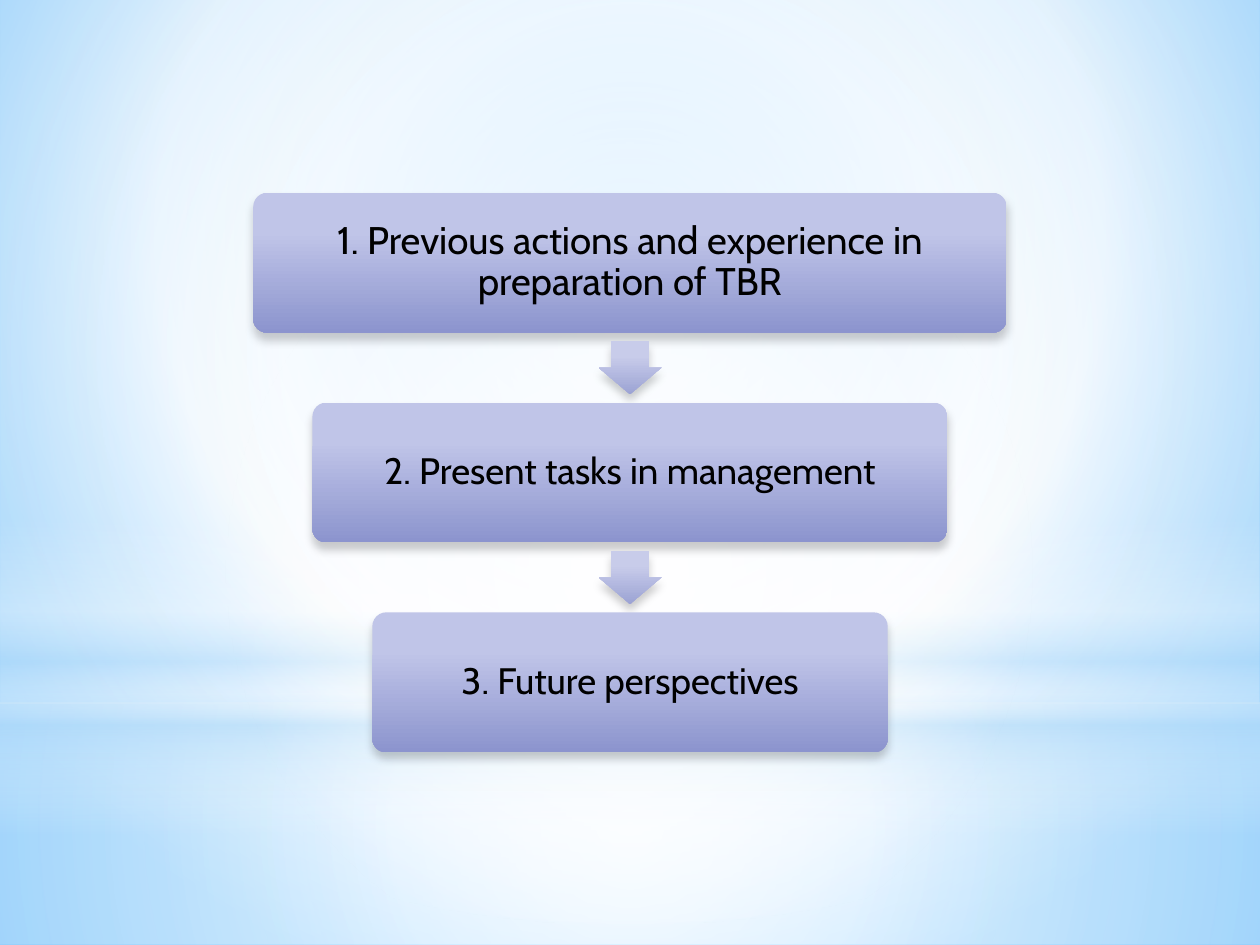
"""Build a slide with three tapering steps joined by arrows on a soft sky background."""
from lxml import etree
from pptx import Presentation
from pptx import util as u
from pptx.dml.color import RGBColor
from pptx.enum import shapes, text
from pptx.oxml.ns import qn

COLORS = {
    "white": "FFFFFF", "pale": "B4DCFA", "sky": "9ED5FF", "blue": "5BB9FF",
    "box_top": "C0C5E8", "box_base": "8C94CE",
    "arrow_top": "C8CCEA", "arrow_base": "9CA3D4", "black": "000000",
}
WIDTH, HEIGHT = u.Inches(10), u.Inches(7.5)
CENTER = (50, 50, 50, 50)


def paint(fill, element, stops, focus=None):
    """Fill with (position, colour, opacity) stops, downward or around a focus."""
    fill.gradient()
    gradient = element.find(".//" + qn("a:gradFill"))
    for child in list(gradient):
        gradient.remove(child)
    gradient.set("rotWithShape", "0")
    stop_list = etree.SubElement(gradient, qn("a:gsLst"))
    for position, color, opacity in stops:
        stop = etree.SubElement(stop_list, qn("a:gs"), pos=str(position * 1000))
        tint = etree.SubElement(stop, qn("a:srgbClr"), val=COLORS[color])
        if opacity < 100:
            etree.SubElement(tint, qn("a:alpha"), val=str(opacity * 1000))
    if focus:
        radial = etree.SubElement(gradient, qn("a:path"))
        radial.set("path", "circle")
        sides = {side: str(share * 1000) for side, share in zip("ltrb", focus)}
        etree.SubElement(radial, qn("a:fillToRect"), **sides)
    else:
        etree.SubElement(gradient, qn("a:lin"), ang="5400000", scaled="0")


def add_panel(kind, left, top, width, height, stops, focus=None, shadow=False):
    """Add a borderless gradient shape, with a soft shadow below if asked."""
    panel = page.shapes.add_shape(kind, int(left), int(top), int(width), int(height))
    panel.line.fill.background()
    panel.shadow.inherit = False
    paint(panel.fill, panel.element, stops, focus)
    if shadow:
        effects = panel.element.spPr.find(qn("a:effectLst"))
        outer = etree.SubElement(
            effects, qn("a:outerShdw"), blurRad=str(u.Pt(5)), dist=str(u.Pt(4)),
            dir="5400000", rotWithShape="0")
        tint = etree.SubElement(outer, qn("a:srgbClr"), val=COLORS["black"])
        etree.SubElement(tint, qn("a:alpha"), val="20000")
    return panel


deck = Presentation()
deck.slide_width, deck.slide_height = WIDTH, HEIGHT
page = deck.slides.add_slide(deck.slide_layouts[6])
paint(page.background.fill, page.element,
      [(0, "sky", 78), (60, "white", 100), (100, "blue", 100)], (20, 10, 20, 60))

kinds = shapes.MSO_SHAPE
horizon = u.Inches(5.58)
add_panel(kinds.RECTANGLE, 0, horizon, WIDTH, HEIGHT - horizon,
          [(0, "white", 91), (37, "white", 76), (100, "pale", 79)], CENTER)
add_panel(kinds.RECTANGLE, 0, 0, WIDTH, horizon,
          [(0, "white", 89), (48, "white", 62), (100, "pale", 79)], CENTER)
add_panel(kinds.RECTANGLE, 0, HEIGHT * 0.55, WIDTH, HEIGHT / 3,
          [(0, "white", 0), (29, "white", 30), (45, "pale", 40),
           (55, "white", 26), (65, "pale", 60), (100, "white", 0)])
add_panel(kinds.OVAL, 0, u.Inches(1.75), WIDTH, horizon,
          [(0, "white", 100), (56, "white", 0)], CENTER)

steps = [
    ("1. Previous actions and experience in preparation of TBR", 5.98, 22),
    ("2. Present tasks in management", 5.04, 21),
    ("3. Future perspectives", 4.09, 21),
]
first_top, box_height, pitch = u.Inches(1.53), u.Inches(1.11), u.Inches(1.665)
arrow_width, arrow_height = u.Inches(0.42), u.Inches(0.5)

for row, (label, inches, size) in enumerate(steps):
    top = first_top + row * pitch
    if row:
        gap_middle = top - (pitch - box_height) / 2
        arrow = add_panel(
            kinds.RIGHT_ARROW, (WIDTH - arrow_width) / 2, gap_middle - arrow_height / 2,
            arrow_width, arrow_height,
            [(28, "arrow_top", 100), (100, "arrow_base", 100)], shadow=True)
        arrow.rotation = 90
        arrow.adjustments[0], arrow.adjustments[1] = 0.6, 0.5

    width = u.Inches(inches)
    box = add_panel(kinds.ROUNDED_RECTANGLE, (WIDTH - width) / 2, top, width, box_height,
                    [(28, "box_top", 100), (100, "box_base", 100)], shadow=True)
    box.adjustments[0] = 0.1
    frame = box.text_frame
    frame.word_wrap = True
    frame.vertical_anchor = text.MSO_ANCHOR.MIDDLE
    frame.margin_left = frame.margin_right = u.Inches(0.11)
    frame.margin_top = frame.margin_bottom = u.Inches(0.11)
    para = frame.paragraphs[0]
    para.alignment = text.PP_ALIGN.CENTER
    para.line_spacing = 0.9
    span = para.add_run()
    span.text = label
    span.font.name, span.font.size = "Cabin", u.Pt(size)
    span.font.color.rgb = RGBColor.from_string(COLORS["black"])

deck.save("out.pptx")
